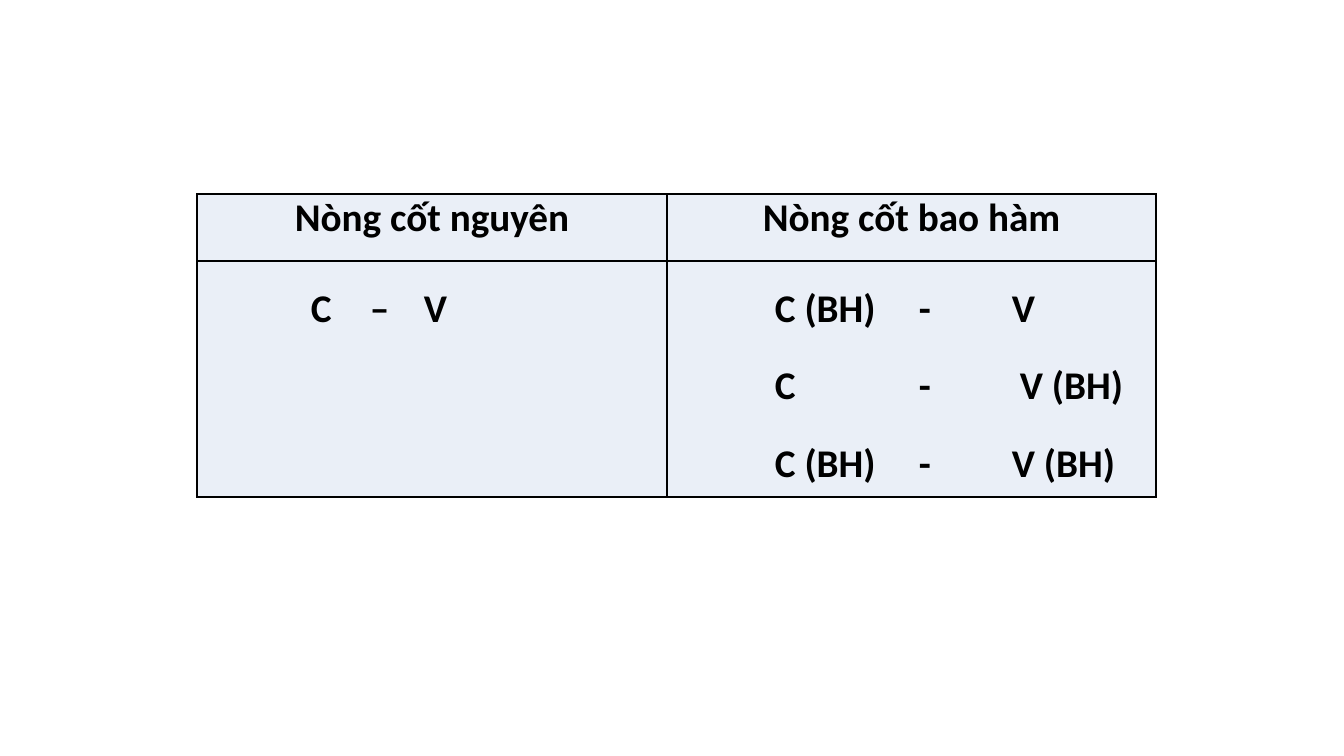
from lxml import etree
from pptx import Presentation
from pptx import util as u
from pptx.dml.color import RGBColor
from pptx.enum import text
from pptx.oxml import ns

BLACK = RGBColor(0x00, 0x00, 0x00)
PALE_BLUE = RGBColor(0xEA, 0xEF, 0xF7)


def px(n):
    return u.Emu(round(n * 914400 / 100.8))


class Deck:
    font = "Calibri"
    size = u.Pt(28)
    border = u.Pt(1)

    def __init__(self, width, height):
        self.prs = Presentation()
        self.prs.slide_width, self.prs.slide_height = px(width), px(height)
        self.s = self.prs.slides.add_slide(self.prs.slide_layouts[6])

    def table(self, x, y, widths, heights):
        frame = self.s.shapes.add_table(
            len(heights), len(widths), px(x), px(y), px(sum(widths)), px(sum(heights)))
        table = frame.table
        table.first_row = table.horz_banding = False
        for column, width in zip(table.columns, widths):
            column.width = px(width)
        for row, height in zip(table.rows, heights):
            row.height = px(height)
        for cell in table.iter_cells():
            self.cell_style(cell)
        return table

    def cell_style(self, cell):
        cell.margin_left = cell.margin_right = px(7)
        cell.margin_top = cell.margin_bottom = 0
        tcPr = cell._tc.get_or_add_tcPr()
        for side in ("lnL", "lnR", "lnT", "lnB"):
            ln = etree.SubElement(tcPr, ns.qn("a:" + side), w=str(self.border))
            fill = etree.SubElement(ln, ns.qn("a:solidFill"))
            etree.SubElement(fill, ns.qn("a:srgbClr"), val=str(BLACK))
        cell.fill.solid()
        cell.fill.fore_color.rgb = PALE_BLUE

    def paragraph(self, p, content, align, spacing=1.0, stops=()):
        p.alignment = align
        p.line_spacing = spacing
        p.space_before = u.Pt(4)
        if stops:
            tabs = etree.SubElement(p._p.get_or_add_pPr(), ns.qn("a:tabLst"))
            for stop in stops:
                etree.SubElement(tabs, ns.qn("a:tab"), pos=str(px(stop)), algn="l")
        r = p.add_run()
        r.text = content
        r.font.name, r.font.size, r.font.bold = self.font, self.size, True
        r.font.color.rgb = BLACK

    def heading(self, cell, content):
        self.paragraph(cell.text_frame.paragraphs[0], content, text.PP_ALIGN.CENTER)

    def patterns(self, cell, rows):
        tf = cell.text_frame
        for i, (parts, stops) in enumerate(rows):
            p = tf.add_paragraph() if i else tf.paragraphs[0]
            content = "".join("\t" + part for part in parts)
            self.paragraph(p, content, text.PP_ALIGN.LEFT, 1.5, stops)


def main():
    deck = Deck(1344, 756)
    table = deck.table(197, 194, (470, 489), (67, 236))
    columns = (
        ("Nòng cốt nguyên", [(("C", "–", "V"), (107, 166, 220))]),
        ("Nòng cốt bao hàm", [
            (("C (BH)", "-", "V"), (101, 245, 338)),
            (("C", "-", "V (BH)"), (101, 245, 346)),
            (("C (BH)", "-", "V (BH)"), (101, 245, 338)),
        ]),
    )
    for i, (title, rows) in enumerate(columns):
        deck.heading(table.cell(0, i), title)
        deck.patterns(table.cell(1, i), rows)
    deck.prs.save("out.pptx")


if __name__ == "__main__":
    main()
